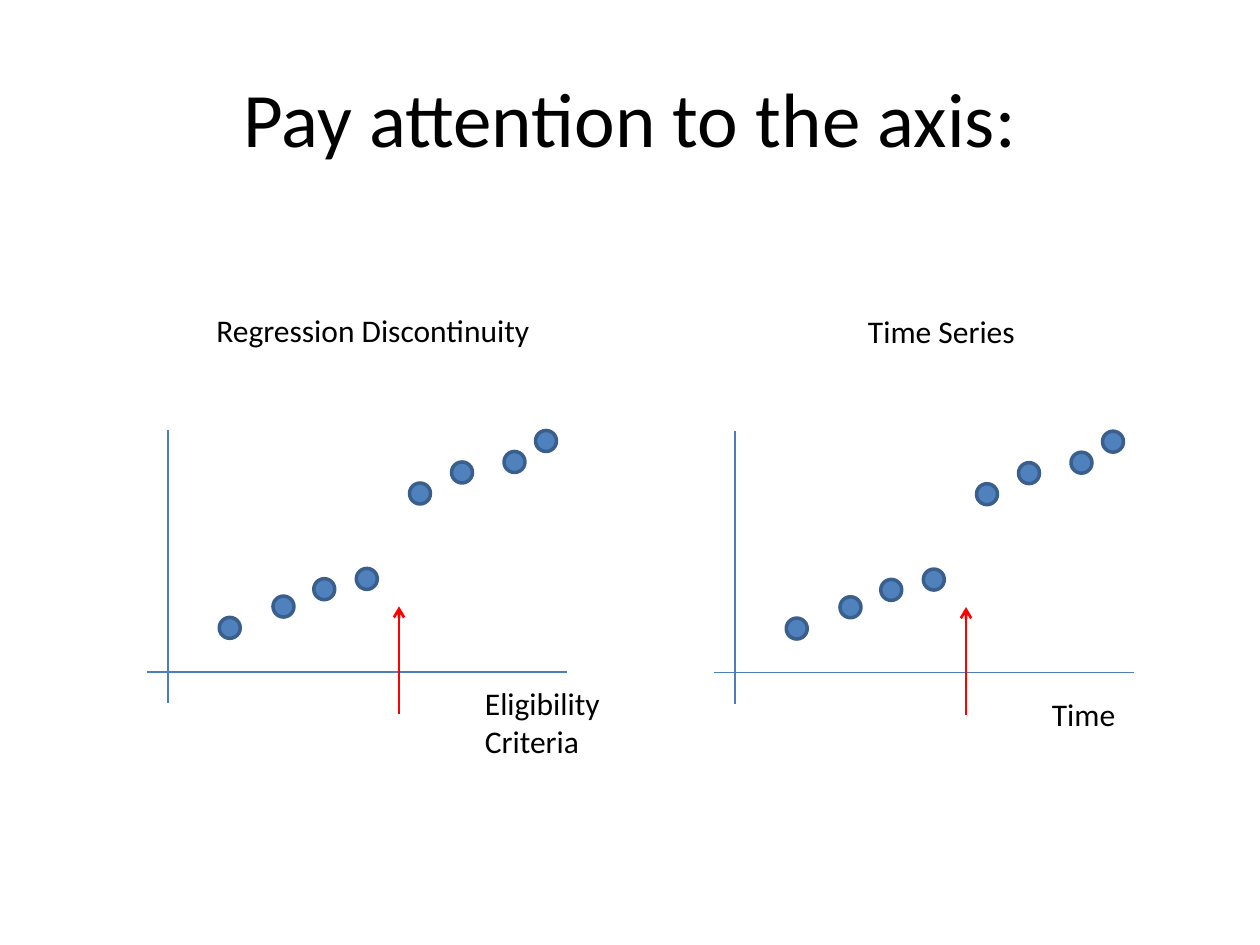
from lxml.etree import SubElement
from pptx import Presentation
from pptx.dml.color import RGBColor
from pptx.enum.shapes import MSO_CONNECTOR as CONN, MSO_SHAPE as SHAPE
from pptx.enum.text import MSO_ANCHOR, MSO_AUTO_SIZE as AUTO, PP_ALIGN
from pptx.oxml.ns import qn
from pptx.util import Pt

BLACK = RGBColor(0x00, 0x00, 0x00)
AXIS = RGBColor(0x4B, 0x7E, 0xBC)
DOT_FILL = RGBColor(0x4F, 0x81, 0xBD)
DOT_LINE = RGBColor(0x3A, 0x5F, 0x8C)
RED = RGBColor(0xFF, 0x00, 0x00)
FONT = "Calibri"

PLOT_W, PLOT_H = 240, 156
DOT = 12
# Left and top of each dot, measured from the plot's top left corner
DOTS = [(41.3, 106.8), (72, 94.6), (95.3, 84.7), (119.6, 78.8),
        (150, 30), (174, 18), (204, 12), (222, 0)]


def add_run(p, text, size):
    r = p.add_run()
    r.text = text
    r.font.name, r.font.size = FONT, Pt(size)
    r.font.color.rgb = BLACK


def add_title(slide, text, left, top, width, height):
    sp = slide.shapes.title
    sp.left, sp.top, sp.width, sp.height = Pt(left), Pt(top), Pt(width), Pt(height)
    tf = sp.text_frame
    tf.vertical_anchor = MSO_ANCHOR.MIDDLE
    p = tf.paragraphs[0]
    p.alignment = PP_ALIGN.CENTER
    add_run(p, text, 44)


def add_label(slide, lines, left, top, width, height):
    tf = slide.shapes.add_textbox(Pt(left), Pt(top), Pt(width), Pt(height)).text_frame
    tf.word_wrap = False
    tf.auto_size = AUTO.SHAPE_TO_FIT_TEXT
    p = tf.paragraphs[0]
    for i, line in enumerate(lines):
        if i:
            p.add_line_break()
        add_run(p, line, 18)


def add_line(slide, x1, y1, x2, y2, color, width, arrow=False):
    s = slide.shapes.add_connector(CONN.STRAIGHT, Pt(x1), Pt(y1), Pt(x2), Pt(y2))
    s.line.color.rgb = color
    s.line.width = Pt(width)
    if arrow:
        SubElement(s.line._get_or_add_ln(), qn("a:tailEnd"), type="arrow")
    SubElement(s._element.spPr, qn("a:effectLst"))


def add_dot(slide, left, top):
    sp = slide.shapes.add_shape(SHAPE.OVAL, Pt(left), Pt(top), Pt(DOT), Pt(DOT))
    sp.shadow.inherit = False
    sp.fill.solid()
    sp.fill.fore_color.rgb = DOT_FILL
    sp.line.color.rgb = DOT_LINE
    sp.line.width = Pt(2)


def add_plot(slide, left, top, heading, heading_box, axis_label, label_box):
    """Draw one plot; the heading and label boxes are relative to its corner."""
    axis_x, axis_y = left + 12, top + 138
    add_line(slide, axis_x, top, axis_x, top + PLOT_H, AXIS, 0.75)
    add_line(slide, left, axis_y, left + PLOT_W, axis_y, AXIS, 0.75)
    for x, y in DOTS:
        add_dot(slide, left + x, top + y)
    cutoff = left + 144
    add_line(slide, cutoff, top + 162, cutoff, top + 100.5, RED, 1.5, arrow=True)
    for lines, (x, y, w, h) in ((axis_label, label_box), (heading, heading_box)):
        add_label(slide, lines, left + x, top + y, w, h)


def main():
    prs = Presentation()
    prs.slide_width, prs.slide_height = Pt(720), Pt(540)
    slide = prs.slides.add_slide(prs.slide_layouts[5])
    add_title(slide, "Pay attention to the axis:", 36, 21.6, 648, 90)
    add_plot(slide, 84, 246,
             ["Regression Discontinuity"], (32.6, -71.8, 195, 29),
             ["Eligibility", "Criteria"], (186, 141.4, 80.6, 51))
    add_plot(slide, 408, 246.4,
             ["Time Series"], (80.9, -71.8, 99.4, 29),
             ["Time"], (186, 147, 51, 29))
    prs.save("out.pptx")


if __name__ == "__main__":
    main()
